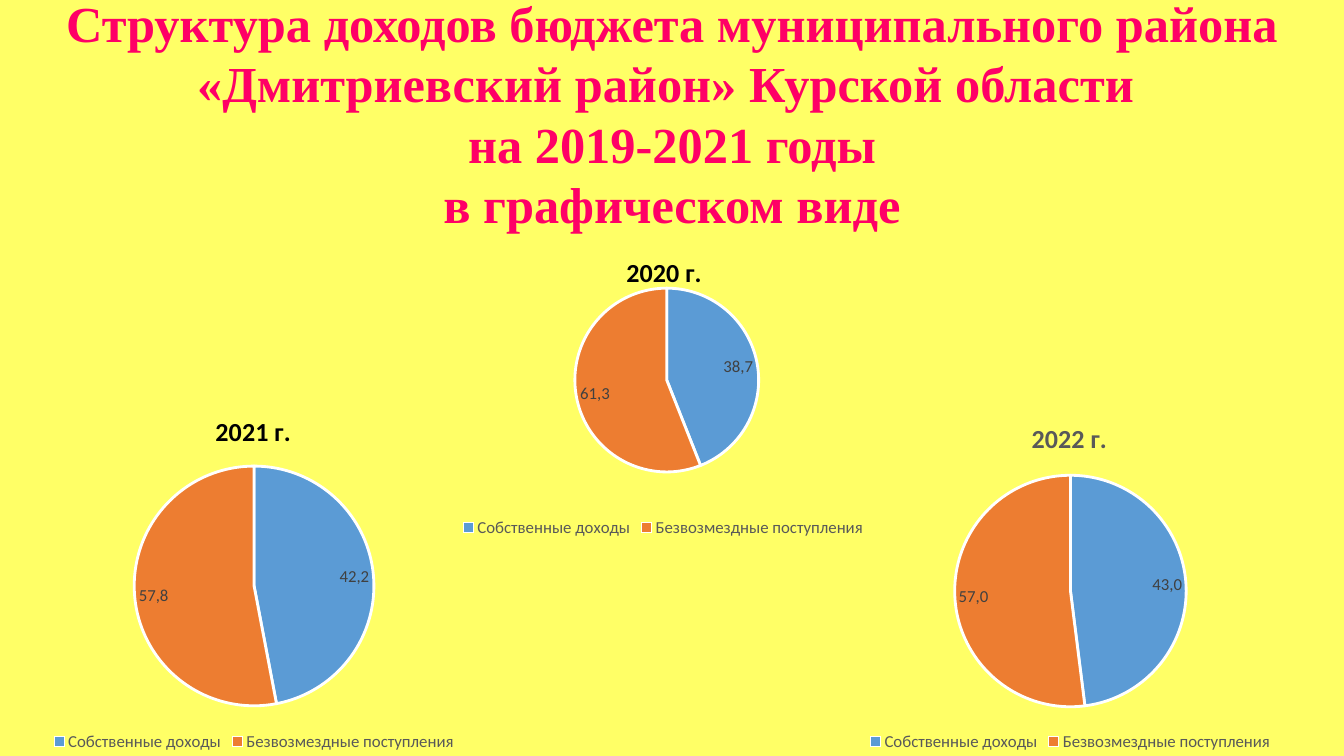
from dataclasses import dataclass

from lxml.etree import SubElement
from pptx import Presentation
from pptx.chart.data import CategoryChartData
from pptx.dml.color import RGBColor
from pptx.enum.chart import XL_CHART_TYPE, XL_LABEL_POSITION, XL_LEGEND_POSITION
from pptx.enum.text import MSO_ANCHOR, PP_ALIGN
from pptx.oxml.ns import qn
from pptx.util import Pt


@dataclass(frozen=True)
class Theme:
    background: RGBColor = RGBColor.from_string("FFFF66")
    heading: RGBColor = RGBColor.from_string("FF0066")
    black: RGBColor = RGBColor.from_string("000000")
    gray: RGBColor = RGBColor.from_string("595959")
    label: RGBColor = RGBColor.from_string("404040")
    white: RGBColor = RGBColor.from_string("FFFFFF")
    slices: tuple = (RGBColor.from_string("5B9BD5"), RGBColor.from_string("ED7D31"))
    heading_font: str = "Times New Roman"
    chart_font: str = "Calibri"
    heading_size: float = 36
    chart_title_size: float = 18.6
    chart_text_size: float = 12


theme = Theme()


def write_text(text_frame, text, *, size, color, font=theme.chart_font, bold=False,
               align=PP_ALIGN.CENTER):
    paragraph = text_frame.paragraphs[0]
    paragraph.text = text
    paragraph.alignment = align
    for run in paragraph.runs:
        run.font.name = font
        run.font.size = Pt(size)
        run.font.bold = bold
        run.font.color.rgb = color


def place_chart_part(part, **settings):
    """Give a chart title or plot area a manual layout, as fractions of the chart."""
    layout = part.find(qn("c:layout"))
    if layout is None:
        layout = SubElement(part, qn("c:layout"))
        position = 1 if part.find(qn("c:tx")) is not None else 0
        part.insert(position, layout)
    for child in list(layout):
        layout.remove(child)
    manual = SubElement(layout, qn("c:manualLayout"))
    for name, value in settings.items():
        SubElement(manual, qn(f"c:{name}")).set("val", str(value))


presentation = Presentation()
presentation.slide_width = Pt(960)
presentation.slide_height = Pt(540)
slide = presentation.slides.add_slide(presentation.slide_layouts[6])
slide.background.fill.solid()
slide.background.fill.fore_color.rgb = theme.background

heading = slide.shapes.add_textbox(Pt(0), Pt(0), Pt(960), Pt(161))
heading.text_frame.word_wrap = True
heading.text_frame.vertical_anchor = MSO_ANCHOR.MIDDLE
write_text(
    heading.text_frame,
    "Структура доходов бюджета муниципального района «Дмитриевский район» "
    "Курской области \vна 2019-2021 годы\vв графическом виде",
    size=theme.heading_size, color=theme.heading, font=theme.heading_font, bold=True,
)

categories = ("Собственные доходы", "Безвозмездные поступления")
# title, title colour, box, values, labels, title position, plot area
pies = (
    ("2020 г.", theme.black, (225.4, 171.4, 496.8, 215.3), (44, 56),
     ("38,7", "61,3"), (0.44, 0.03), (0.02, 0.16, 0.97, 0.61)),
    ("2021 г.", theme.black, (9.4, 284.4, 344.2, 255.6), (47, 53),
     ("42,2", "57,8"), (0.41, 0.03), (0.02, 0.19, 0.96, 0.67)),
    ("2022 г.", theme.gray, (569.5, 289.4, 390.3, 250.6), (48, 52),
     ("43,0", "57,0"), (0.42, 0.03), (0.02, 0.2, 0.96, 0.66)),
)

for title, title_color, box, values, labels, title_place, plot_place in pies:
    chart_data = CategoryChartData()
    chart_data.categories = categories
    chart_data.add_series("Доходы", values)
    chart = slide.shapes.add_chart(
        XL_CHART_TYPE.PIE, *(Pt(length) for length in box), chart_data
    ).chart
    chart.font.name = theme.chart_font
    chart.font.size = Pt(theme.chart_text_size)
    chart.font.color.rgb = theme.gray

    chart.has_title = True
    write_text(chart.chart_title.text_frame, title, size=theme.chart_title_size,
               color=title_color, bold=True)
    chart.chart_title.include_in_layout = False
    title_x, title_y = title_place
    place_chart_part(chart.chart_title._element, xMode="edge", yMode="edge",
                     x=title_x, y=title_y)

    chart.has_legend = True
    chart.legend.position = XL_LEGEND_POSITION.BOTTOM
    chart.legend.include_in_layout = False

    plot = chart.plots[0]
    plot.vary_by_categories = True
    plot_x, plot_y, plot_width, plot_height = plot_place
    place_chart_part(plot._element.getparent(), layoutTarget="inner",
                     xMode="edge", yMode="edge",
                     x=plot_x, y=plot_y, w=plot_width, h=plot_height)

    for index, (label, color) in enumerate(zip(labels, theme.slices)):
        point = plot.series[0].points[index]
        point.format.fill.solid()
        point.format.fill.fore_color.rgb = color
        point.format.line.color.rgb = theme.white
        point.format.line.width = Pt(2)
        write_text(point.data_label.text_frame, label,
                   size=theme.chart_text_size, color=theme.label)
        point.data_label.position = XL_LABEL_POSITION.BEST_FIT

presentation.save("out.pptx")
